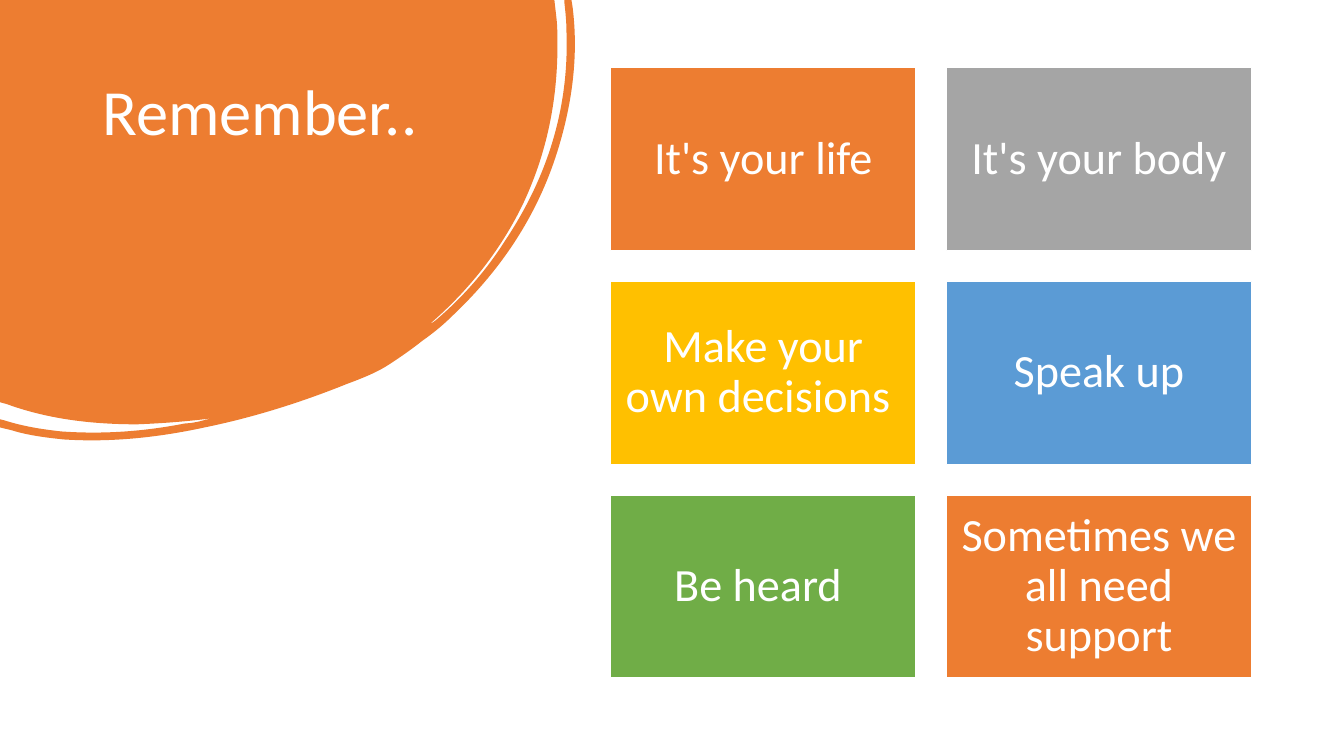
from lxml import etree
from pptx import Presentation
from pptx import util as u
from pptx.dml.color import RGBColor
from pptx.enum import shapes, text
from pptx.oxml import ns

Pt = u.Pt
WHITE = RGBColor(0xFF, 0xFF, 0xFF)
ORANGE = RGBColor(0xED, 0x7D, 0x31)
GREY = RGBColor(0xA5, 0xA5, 0xA5)
GOLD = RGBColor(0xFF, 0xC0, 0x00)
BLUE = RGBColor(0x5B, 0x9B, 0xD5)
GREEN = RGBColor(0x70, 0xAD, 0x47)

TILES = [
    ("It's your life", ORANGE), ("It's your body", GREY),
    ("Make your own decisions ", GOLD), ("Speak up", BLUE),
    ("Be heard ", GREEN), ("Sometimes we all need support", ORANGE),
]

# Blob outline in points: a pair is a straight line, three pairs a curve
BLOB = [
    (396, 0), (397.4, 12.2),
    # inner edge of the right-hand gap, then back up its outer edge
    (398.2, 18.7, 398.2, 25.9, 398.2, 32.4),
    (398.2, 72.7, 390.2, 110.9, 373, 146.9),
    (357.1, 179.3, 334.8, 207.4, 307.4, 231.1),
    (308.9, 231.1, 309.6, 229.7, 311, 229),
    (330.5, 212.4, 347, 193.7, 360.7, 172.1),
    (391, 126.7, 406.8, 77, 404.6, 21.6),
    (404.6, 15.1, 403.9, 8.6, 403.2, 2.2),
    (403.2, 0), (408.2, 0), (409, 5),
    # outer rim
    (413.3, 38.9, 409, 73.4, 398.2, 108),
    (383.8, 154.1, 357.8, 193, 322.6, 226.1),
    (316.1, 232.6, 308.9, 238.3, 301.7, 243.4),
    (294.5, 249.1, 287.3, 254.2, 278.6, 259.9),
    (270, 265.7, 259.2, 270, 247.7, 274.3),
    (215.3, 287.3, 181.4, 298.1, 146.2, 305.3),
    (113, 312.5, 79.2, 316.1, 45.4, 313.9),
    (32.4, 312.5, 20.2, 311, 8.6, 307.4),
    (0, 305.3), (0, 299.5), (2.9, 300.2),
    # lower gap, out and back
    (16.6, 304.6, 30.2, 306.7, 43.9, 308.2),
    (74.2, 310.3, 103, 308.2, 132.5, 302.4),
    (136.1, 302.4, 139, 301.7, 142.6, 301),
    (145.4, 300.2, 148.3, 299.5, 151.2, 298.8),
    (133.9, 301, 115.9, 302.4, 97.9, 303.1),
    (66.2, 303.1, 34.6, 299.5, 5, 288.7),
    (0, 287.3),
]


def write(shape, words, size, align, pad, anchor):
    frame = shape.text_frame
    form = dict(word_wrap=True, vertical_anchor=anchor, margin_left=Pt(pad[0]),
                margin_right=Pt(pad[0]), margin_top=Pt(pad[1]), margin_bottom=Pt(pad[1]))
    for key, val in form.items():
        setattr(frame, key, val)
    para = frame.paragraphs[0]
    para.alignment, para.line_spacing = align, 0.9
    run = para.add_run()
    run.text = words
    for key, val in dict(name="Calibri", size=Pt(size)).items():
        setattr(run.font, key, val)
    run.font.color.rgb = WHITE


def bend(line, seg):
    """Make a straight segment a cubic curve by adding its two handles."""
    line.tag = ns.qn("a:cubicBezTo")
    for n in (0, 1):
        knob = etree.Element(ns.qn("a:pt"), x=str(Pt(seg[2 * n])), y=str(Pt(seg[2 * n + 1])))
        line.insert(n, knob)


def draw_blob(slide, left, top, width, height):
    form = slide.shapes.build_freeform(0, 0)
    form.add_line_segments([(Pt(seg[-2]), Pt(seg[-1])) for seg in BLOB], close=True)
    blob = form.convert_to_shape()
    track = blob._element.find(".//" + ns.qn("a:path"))
    for line, seg in zip(track.findall(ns.qn("a:lnTo")), BLOB):
        if len(seg) == 6:
            bend(line, seg)
    # the curves reach past their end points, so widen the frame to hold them
    track.set("w", str(Pt(width)))
    track.set("h", str(Pt(height)))
    frame = dict(left=left, top=top, width=width, height=height)
    for key, val in frame.items():
        setattr(blob, key, Pt(val))
    blob.shadow.inherit = False
    blob.fill.solid()
    blob.fill.fore_color.rgb = ORANGE
    blob.line.fill.background()


def draw_title(slide, left, top, width, height):
    box = slide.shapes.add_textbox(Pt(left), Pt(top), Pt(width), Pt(height))
    write(box, "Remember..", 46, text.PP_ALIGN.LEFT, (7.2, 3.6), text.MSO_ANCHOR.TOP)


def draw_tiles(slide, left, top, width, cols=2):
    # gap is a tenth of a tile's width, height six tenths
    wide = width / (cols + 0.1 * (cols - 1))
    high, gap = 0.6 * wide, 0.1 * wide
    for n, (words, tint) in enumerate(TILES):
        row, col = divmod(n, cols)
        tile = slide.shapes.add_shape(
            shapes.MSO_SHAPE.RECTANGLE, Pt(left + col * (wide + gap)),
            Pt(top + row * (high + gap)), Pt(wide), Pt(high))
        tile.shadow.inherit = False
        tile.fill.solid()
        tile.fill.fore_color.rgb = tint
        tile.line.color.rgb = WHITE
        tile.line.width = Pt(1)
        write(tile, words, 33, text.PP_ALIGN.CENTER, (10, 10), text.MSO_ANCHOR.MIDDLE)


def main():
    deck = Presentation()
    deck.slide_width, deck.slide_height = Pt(960), Pt(540)
    slide = deck.slides.add_slide(deck.slide_layouts[6])
    draw_blob(slide, 0, 0, 411, 314.5)
    draw_title(slide, 66.2, 53.5, 253.5, 160)
    draw_tiles(slide, 436.2, 48.3, 457.8)
    deck.save("out.pptx")


if __name__ == "__main__":
    main()
